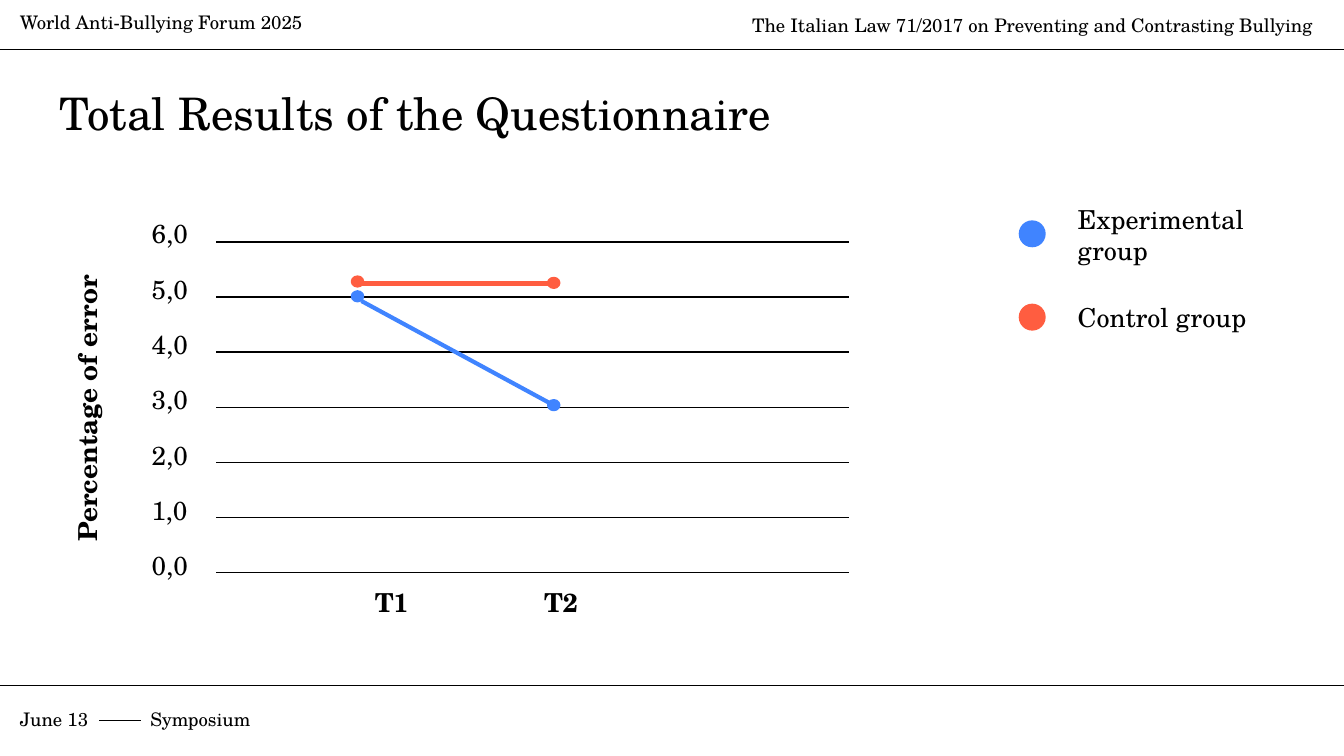
"""Build the slide showing the total questionnaire results of both groups."""
import pptx
import pptx.dml.color
import pptx.enum.shapes
import pptx.enum.text
import pptx.oxml.ns
import pptx.util
from lxml import etree

Inches = pptx.util.Inches
Pt = pptx.util.Pt
ALIGN = pptx.enum.text.PP_ALIGN
COLORS = {"ink": "000000", "experimental": "4084FF", "control": "FF5D40"}
FONT = "TeX Gyre Schola"
FRAME_FORMAT = {
    "word_wrap": True,
    "auto_size": pptx.enum.text.MSO_AUTO_SIZE.NONE,
    "vertical_anchor": pptx.enum.text.MSO_ANCHOR.TOP,
    "margin_left": Inches(0.1),
    "margin_top": Inches(0.1),
    "margin_right": Inches(0.1),
    "margin_bottom": Inches(0.1),
}

presentation = pptx.Presentation()
presentation.slide_width = Inches(10)
presentation.slide_height = Inches(10 * 9 / 16)
slide = presentation.slides.add_slide(presentation.slide_layouts[5])


def write_text(text, box, size, bold=False, align=ALIGN.LEFT, shape=None):
    left, top, width, height = map(Inches, box)
    if shape is None:
        shape = slide.shapes.add_textbox(left, top, width, height)
    place = {"left": left, "top": top, "width": width, "height": height}
    for name, value in place.items():
        setattr(shape, name, value)
    for name, value in FRAME_FORMAT.items():
        setattr(shape.text_frame, name, value)
    paragraph = shape.text_frame.paragraphs[0]
    paragraph.text = text
    paragraph.alignment = align
    font = paragraph.runs[0].font
    for name, value in {"name": FONT, "size": Pt(size), "bold": bold}.items():
        setattr(font, name, value)
    font.color.rgb = pptx.dml.color.RGBColor.from_string(COLORS["ink"])
    return shape


def draw_line(start, end, color="ink", width=0.75):
    line = slide.shapes.add_connector(
        pptx.enum.shapes.MSO_CONNECTOR.STRAIGHT, *map(Inches, start + end)
    )
    line.line.color.rgb = pptx.dml.color.RGBColor.from_string(COLORS[color])
    line.line.width = Pt(width)
    etree.SubElement(line._element.spPr, pptx.oxml.ns.qn("a:effectLst"))


for y in (0.37, 5.1):
    draw_line((-0.02, y), (10.02, y))
write_text("World Anti-Bullying Forum 2025", (0.05, 0, 3.03, 0.16), 10)
subject = write_text(
    "The Italian Law 71/2017 on Preventing and Contrasting Bullying",
    (5.14, 0, 4.72, 0.16), 10, align=ALIGN.RIGHT,
)
subject.text_frame.paragraphs[0].line_spacing = 1.15
footer = write_text("June 13\tSymposium", (0.05, 5.17, 2.17, 0.3), 10)
properties = footer.text_frame.paragraphs[0]._p.get_or_add_pPr()
tabs = etree.SubElement(properties, pptx.oxml.ns.qn("a:tabLst"))
etree.SubElement(tabs, pptx.oxml.ns.qn("a:tab"), pos=str(Inches(0.97)), algn="l")
draw_line((0.74, 5.36), (1.05, 5.36))

write_text("Total Results of the Questionnaire", (0.34, 0.54, 9.32, 0.65), 24,
           shape=slide.shapes.title)

for value in range(7):
    y = 4.26 - 0.41 * value
    draw_line((1.61, y), (6.32, y))
    write_text(f"{value},0", (1.03, 3.99 - 2.47 * value / 6, 0.58, 0.34), 14)
for label, left in (("T1", 2.69), ("T2", 3.95)):
    write_text(label, (left, 4.26, 0.58, 0.34), 14, bold=True)
axis_title = write_text("Percentage of error", (-0.57, 2.69, 2.44, 0.44), 14, bold=True)
axis_title.rotation = 270

draw_line((2.69, 2.24), (4.11, 3.01), "experimental", 2.25)
draw_line((2.68, 2.11), (4.12, 2.11), "control", 2.25)
dots = [
    ("experimental", 2.62, 2.17, 0.08, 0.07),
    ("experimental", 4.08, 2.98, 0.08, 0.07),
    ("control", 2.62, 2.06, 0.08, 0.07),
    ("control", 4.08, 2.07, 0.08, 0.07),
    ("experimental", 7.59, 1.65, 0.18, 0.18),
    ("control", 7.59, 2.27, 0.18, 0.18),
]
for group, *box in dots:
    dot = slide.shapes.add_shape(
        pptx.enum.shapes.MSO_SHAPE.OVAL, *map(Inches, box)
    )
    color = pptx.dml.color.RGBColor.from_string(COLORS[group])
    dot.shadow.inherit = False
    dot.fill.solid()
    dot.fill.fore_color.rgb = color
    dot.line.color.rgb = color
    dot.line.width = Pt(1.5)

for label, top, height in (("Experimental group", 1.41, 0.67), ("Control group", 2.14, 0.44)):
    write_text(label, (7.92, top, 1.74, height), 14)

presentation.save("out.pptx")
